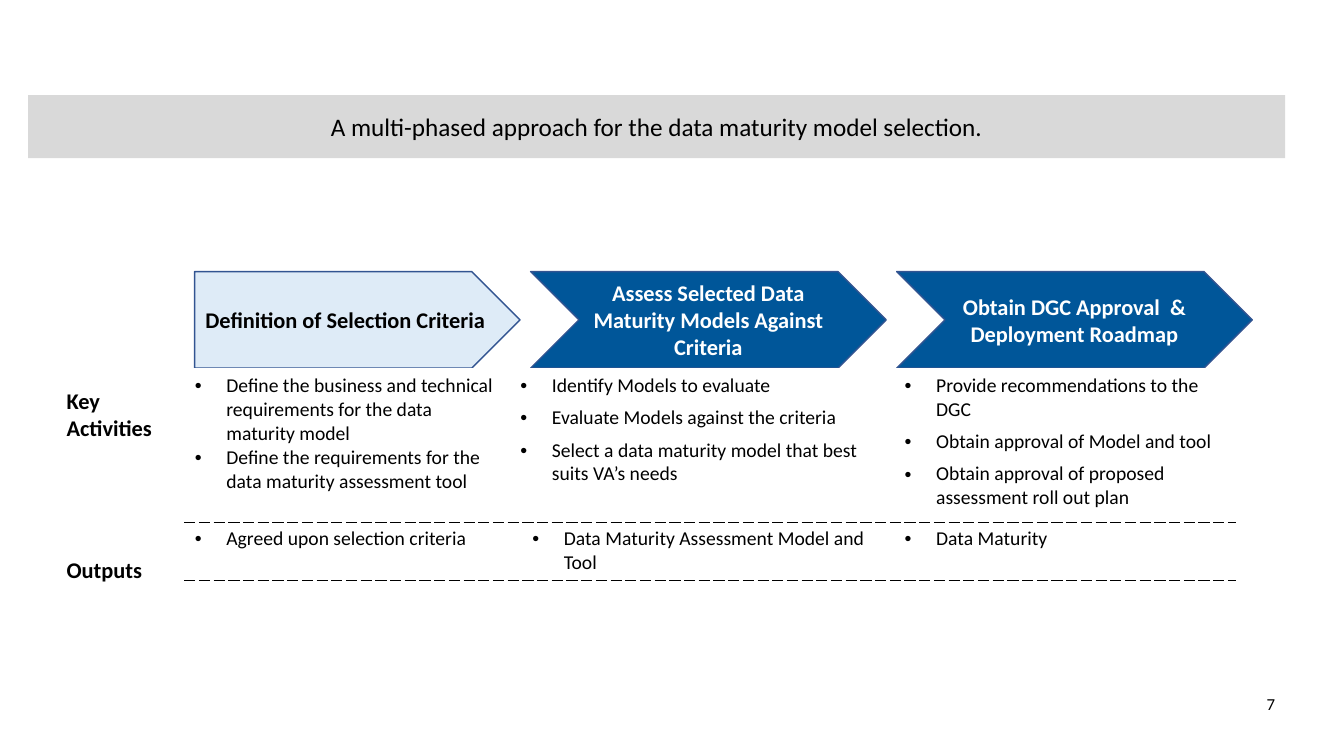
from pptx import Presentation
from pptx.dml.color import RGBColor
from pptx.enum.shapes import MSO_SHAPE
from pptx.enum.text import MSO_ANCHOR, MSO_AUTO_SIZE, PP_ALIGN
from pptx.oxml.ns import qn
from pptx.util import Pt
from lxml.etree import SubElement

BLACK = RGBColor(0, 0, 0)
WHITE = RGBColor(255, 255, 255)
GREY = RGBColor(0xD9, 0xD9, 0xD9)
PALE = RGBColor(0xDE, 0xEB, 0xF7)
BLUE = RGBColor(0x00, 0x56, 0x99)
EDGE = RGBColor(0x32, 0x54, 0x91)

PHASES = [
    ("Definition of Selection Criteria", MSO_SHAPE.PENTAGON, 232.5, PALE, BLACK),
    ("Assess Selected Data Maturity Models Against Criteria", MSO_SHAPE.CHEVRON, 254, BLUE, WHITE),
    ("Obtain DGC Approval  & Deployment Roadmap", MSO_SHAPE.CHEVRON, 254, BLUE, WHITE),
]
TASKS = [
    ["Define the business and technical requirements for the data maturity model",
     "Define the requirements for the data maturity assessment tool"],
    ["Identify Models to evaluate", "Evaluate Models against the criteria",
     "Select a data maturity model that best suits VA’s needs"],
    ["Provide recommendations to the DGC", "Obtain approval of Model and tool",
     "Obtain approval of proposed assessment roll out plan"],
]
OUTPUTS = [["Agreed upon selection criteria"],
           ["Data Maturity Assessment Model and Tool"], ["Data Maturity"]]
COLS = [232.5, 261, 257]
ROWS = [109.5, 41.5]
INDENTS = [[22.5, 22.5, 36], [22.5, 31, 36]]
GAPS = [[0, 6, 6], [0, 0, 0]]


def style(item, form):
    """Set each attribute named in form on item."""
    for name, value in form.items():
        setattr(item, name, value)


def write(frame, text, size, color=BLACK, bold=False, align=PP_ALIGN.LEFT, anchor=MSO_ANCHOR.MIDDLE):
    """Put one formatted paragraph in a text frame."""
    style(frame, {"text": text, "word_wrap": True, "vertical_anchor": anchor,
                  "auto_size": MSO_AUTO_SIZE.NONE})
    line = frame.paragraphs[0]
    line.alignment = align
    paint(line.runs[0].font, size, color, bold)
    return line


def paint(font, size, color=BLACK, bold=False):
    """Set the face, size, weight and colour of a font."""
    style(font, {"name": "Calibri", "size": Pt(size), "bold": bold})
    font.color.rgb = color


def banner(slide, left, top, width, height):
    """Place the title as a grey band."""
    title = slide.shapes.title
    style(title, {"left": Pt(left), "top": Pt(top), "width": Pt(width), "height": Pt(height)})
    title.fill.solid()
    title.fill.fore_color.rgb = GREY
    line = write(title.text_frame, "A multi-phased approach for the data maturity model selection.",
                 18, align=PP_ALIGN.CENTER)
    line.space_before = Pt(12)


def phases(slide, left, top, height, gap):
    """Draw the row of phase arrows."""
    for text, kind, width, fill, ink in PHASES:
        arrow = slide.shapes.add_shape(kind, Pt(left), Pt(top), Pt(width), Pt(height))
        arrow.shadow.inherit = False
        arrow.fill.solid()
        arrow.fill.fore_color.rgb = fill
        arrow.line.color.rgb = EDGE
        arrow.line.width = Pt(1)
        write(arrow.text_frame, text, 16, ink, True, PP_ALIGN.CENTER)
        left += width + gap


def border(cell, side, color, dash):
    """Add one border line to a cell."""
    edge = SubElement(cell._tc.get_or_add_tcPr(), qn(f"a:ln{side}"), w=str(Pt(1)))
    fill = SubElement(edge, qn("a:solidFill"))
    SubElement(fill, qn("a:srgbClr"), val=str(color))
    SubElement(edge, qn("a:prstDash"), val=dash)


def bullets(cell, items, indent, gap):
    """Fill a cell with a bulleted list."""
    frame = cell.text_frame
    frame.text = "\n".join(items)
    for line in frame.paragraphs:
        line.space_before = Pt(gap)
        paint(line.runs[0].font, 14)
        props = line._p.get_or_add_pPr()
        props.set("marL", str(Pt(indent)))
        props.set("indent", str(-Pt(22.5)))
        SubElement(props, qn("a:buFont"), typeface="Arial")
        SubElement(props, qn("a:buChar"), char="•")


def grid(slide, left, top):
    """Build the table of activities and outputs."""
    table = slide.shapes.add_table(len(ROWS), len(COLS), Pt(left), Pt(top),
                                   Pt(sum(COLS)), Pt(sum(ROWS))).table
    style(table, {"first_row": False, "horz_banding": False})
    for col, width in zip(table.columns, COLS):
        col.width = Pt(width)
    for r, lists in enumerate([TASKS, OUTPUTS]):
        table.rows[r].height = Pt(ROWS[r])
        for c, items in enumerate(lists):
            cell = table.cell(r, c)
            bullets(cell, items, INDENTS[r][c], GAPS[r][c])
            for side in "LRTB":
                dashed = side == "B" or (side == "T" and r > 0)
                border(cell, side, BLACK if dashed else WHITE, "dash" if dashed else "solid")
            cell.fill.background()


def label(slide, text, left, top, width, height, size=16, **form):
    """Place a text box."""
    box = slide.shapes.add_textbox(Pt(left), Pt(top), Pt(width), Pt(height))
    write(box.text_frame, text, size, **form)


def main():
    """Build and save the slide."""
    deck = Presentation()
    style(deck, {"slide_width": Pt(960), "slide_height": Pt(540)})
    slide = deck.slides.add_slide(deck.slide_layouts[5])
    banner(slide, 20, 68, 898, 45)
    label(slide, "7", 680.5, 488, 237.5, 29, 12, align=PP_ALIGN.RIGHT)
    phases(slide, 139, 194, 69, 7.5)
    grid(slide, 132, 263.5)
    for text, top, height in [("Key Activities", 273, 46), ("Outputs", 394, 27)]:
        label(slide, text, 40.5, top, 91.5, height, bold=True, anchor=MSO_ANCHOR.TOP)
    deck.save("out.pptx")


if __name__ == "__main__":
    main()
